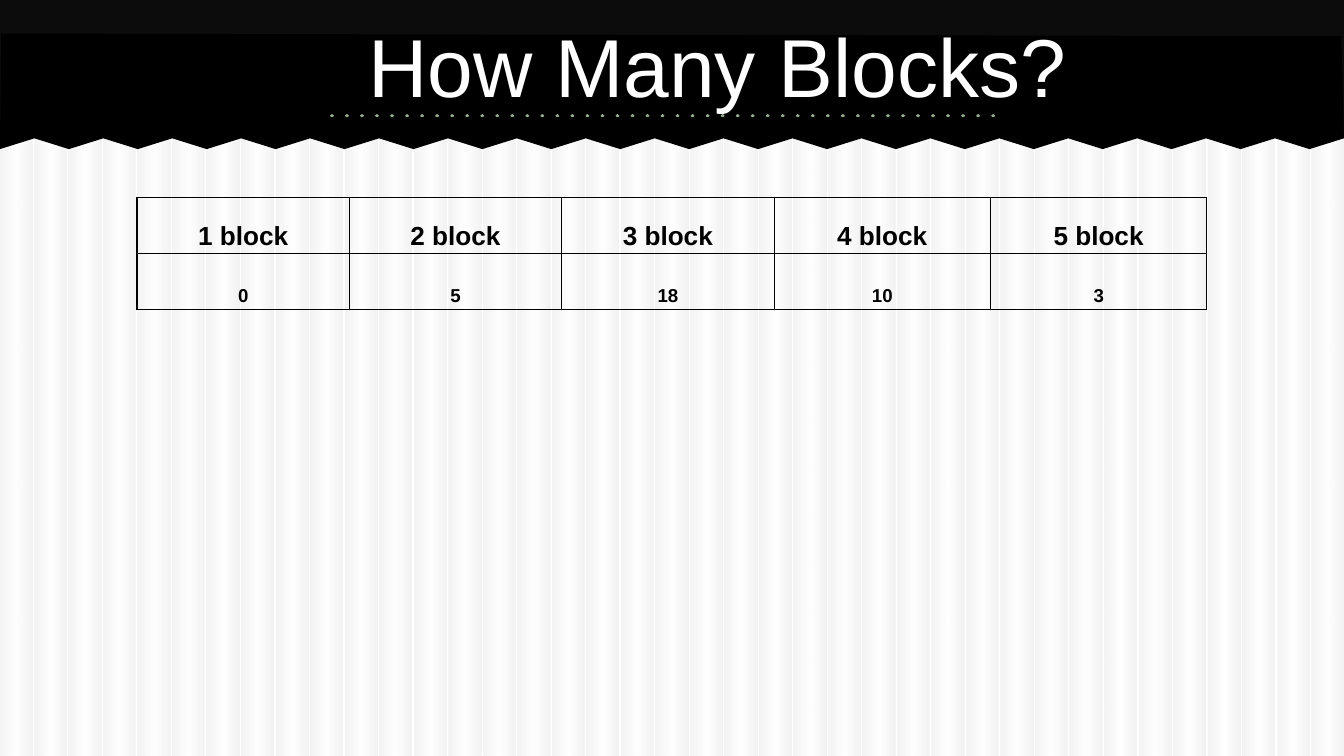
from lxml import etree
from pptx import Presentation
from pptx import util as u
from pptx.dml.color import RGBColor
from pptx.enum import shapes, text
from pptx.oxml import parse_xml
from pptx.oxml.ns import nsdecls, qn

W = 10
H = W * 9 / 16
STRIPES = 39
STRIPE_PITCH = 9.76 / (STRIPES - 1)
TOOTH = W / STRIPES
TABLE_ROWS = [
    ["1 block", "2 block", "3 block", "4 block", "5 block"],
    ["0", "5", "18", "10", "3"],
]
COL_WIDTHS = [1.58, 1.58, 1.58, 1.61, 1.61]
ROW_HEIGHT = 0.83 / len(TABLE_ROWS)
ROW_SIZES = [14, 10]


def color(value):
    return RGBColor.from_string(value)


def write(tf, content, size, fill="000000", bold=False, spacing=None):
    p = tf.paragraphs[0]
    p.alignment = text.PP_ALIGN.CENTER
    p.line_spacing = spacing
    r = p.add_run()
    r.text = content
    r.font.name = "Arial"
    r.font.size = u.Pt(size)
    r.font.bold = bold
    r.font.color.rgb = color(fill)


def paint(sp, fill):
    sp.shadow.inherit = False
    sp.fill.solid()
    sp.fill.fore_color.rgb = color(fill)
    sp.line.fill.background()


def add_rect(s, x, y, w, h, fill):
    sp = s.shapes.add_shape(shapes.MSO_SHAPE.RECTANGLE, *map(u.Inches, (x, y, w, h)))
    paint(sp, fill)
    return sp


def fade(sp, stops, alpha):
    gs = "".join(
        f'<a:gs pos="{pos * 1000}"><a:srgbClr val="{value}">'
        f'<a:alpha val="{alpha * 1000}"/></a:srgbClr></a:gs>'
        for pos, value in stops
    )
    gradient = parse_xml(
        f'<a:gradFill {nsdecls("a")} rotWithShape="1"><a:gsLst>{gs}</a:gsLst>'
        '<a:lin ang="0" scaled="0"/></a:gradFill>'
    )
    spPr = sp._element.spPr
    spPr.replace(spPr.find(qn("a:solidFill")), gradient)


def add_stripes(s):
    for i in range(STRIPES):
        stripe = add_rect(s, i * STRIPE_PITCH, 0.01, 0.24, H, "FFFFFF")
        fade(stripe, [(0, "BFBFBF"), (50, "FFFFFF"), (97, "BFBFBF"), (100, "BFBFBF")], 19)


def add_torn_band(s):
    teeth = [(i * TOOTH, 1.03 if i % 2 else 1.11) for i in range(STRIPES, -1, -1)]
    outline = [(u.Inches(x), u.Inches(y)) for x, y in [(0.01, 0.25), (9.98, 0.27)] + teeth]
    builder = s.shapes.build_freeform(*outline[0])
    builder.add_line_segments(outline[1:], close=True)
    paint(builder.convert_to_shape(), "000000")


def add_dotted_line(s, x1, x2, y):
    line = s.shapes.add_connector(
        shapes.MSO_CONNECTOR.STRAIGHT, *map(u.Inches, (x1, y, x2, y))
    )
    line.line.color.rgb = color("94AE8E")
    line.line.width = u.Pt(2)
    spPr = line._element.spPr
    ln = spPr.find(qn("a:ln"))
    ln.set("cap", "rnd")
    etree.SubElement(ln, qn("a:prstDash"), val="dot")
    etree.SubElement(spPr, qn("a:effectLst"))


def add_title(s, content):
    tf = s.shapes.add_textbox(0, u.Inches(0.01), u.Inches(10.68), u.Inches(0.94)).text_frame
    tf.word_wrap = True
    tf.vertical_anchor = text.MSO_ANCHOR.MIDDLE
    tf.margin_left = tf.margin_right = tf.margin_top = tf.margin_bottom = u.Inches(0.1)
    write(tf, content, size=44, fill="FFFFFF")


def set_borders(cell, value, width):
    tcPr = cell._tc.get_or_add_tcPr()
    for side in ("lnL", "lnR", "lnT", "lnB"):
        tcPr.append(parse_xml(
            f'<a:{side} {nsdecls("a")} w="{u.Pt(width)}"><a:solidFill>'
            f'<a:srgbClr val="{value}"/></a:solidFill></a:{side}>'
        ))


def add_block_table(s, x, y):
    rows = len(TABLE_ROWS)
    frame = s.shapes.add_table(
        rows, len(COL_WIDTHS),
        *map(u.Inches, (x, y, sum(COL_WIDTHS), rows * ROW_HEIGHT)),
    )
    table = frame.table
    table.first_row = table.horz_banding = False
    for column, width in zip(table.columns, COL_WIDTHS):
        column.width = u.Inches(width)
    for i, (values, size) in enumerate(zip(TABLE_ROWS, ROW_SIZES)):
        table.rows[i].height = u.Inches(ROW_HEIGHT)
        for j, value in enumerate(values):
            cell = table.cell(i, j)
            cell.margin_left = cell.margin_right = u.Inches(0.03)
            cell.margin_top = cell.margin_bottom = u.Inches(0.02)
            cell.vertical_anchor = text.MSO_ANCHOR.BOTTOM
            set_borders(cell, "000000", 0.75)
            cell.fill.background()
            write(cell.text_frame, value, size=size, bold=True, spacing=1.15)


def main():
    prs = Presentation()
    prs.slide_width, prs.slide_height = u.Inches(W), u.Inches(H)
    s = prs.slides.add_slide(prs.slide_layouts[6])
    s.background.fill.solid()
    s.background.fill.fore_color.rgb = color("FFFFFF")
    add_stripes(s)
    add_rect(s, 0, 0, W, 1.02, "0C0C0C")
    add_torn_band(s)
    add_dotted_line(s, 2.47, 7.5, 0.86)
    add_title(s, "How Many Blocks?")
    add_block_table(s, 1.02, 1.47)
    prs.save("out.pptx")


if __name__ == "__main__":
    main()
